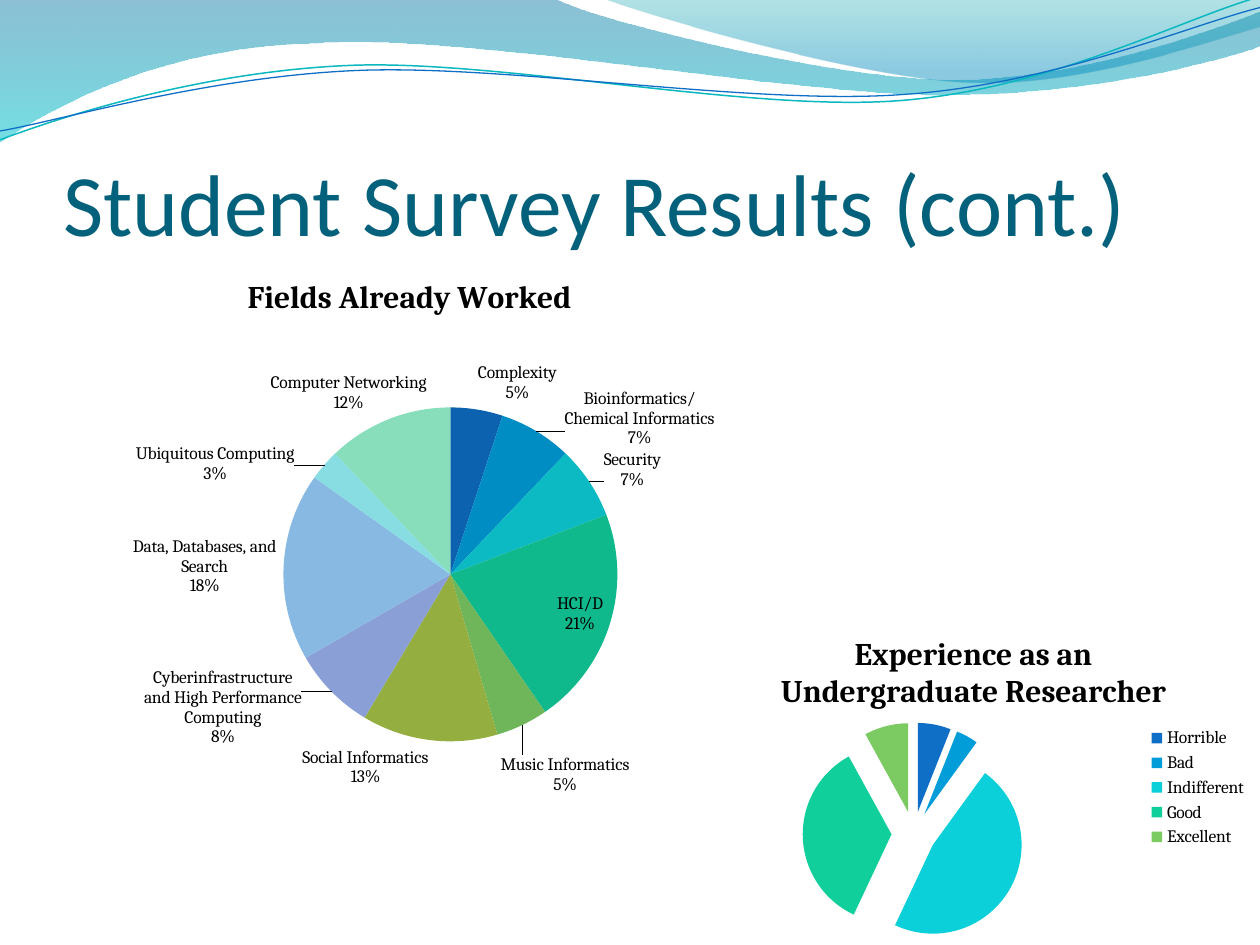
import dataclasses
import pptx
import pptx.chart.data
import pptx.dml.color
import pptx.enum.chart
import pptx.enum.text
import pptx.oxml
import pptx.oxml.ns
import pptx.slide
import pptx.util

COLUMNS = 10
ROWS = 7.5
LABEL_SIZE = (
    '<c:extLst {}><c:ext uri="{{CE6537A1-D6FC-4f65-9D91-7224C49458BB}}" '
    'xmlns:c15="http://schemas.microsoft.com/office/drawing/2012/chart">'
    '<c15:layout><c:manualLayout><c:w val="{}"/><c:h val="{}"/></c:manualLayout>'
    '</c15:layout></c:ext></c:extLst>')


def colour(value):
    return pptx.dml.color.RGBColor.from_string(value)


def element(tag, **attributes):
    item = pptx.oxml.parse_xml(f"<{tag} {pptx.oxml.ns.nsdecls(tag.split(':')[0])}/>")
    for name, value in attributes.items():
        item.set(name, str(value))
    return item


@dataclasses.dataclass
class SurveySlide:
    deck: pptx.presentation.Presentation
    page: pptx.slide.Slide
    title_font: str = "Calibri"
    chart_font: str = "Cambria"
    title_colour: str = "04617B"
    text_colour: str = "000000"

    def grid(self, column, row):
        return (int(self.deck.slide_width * column / COLUMNS),
                int(self.deck.slide_height * row / ROWS))

    def box(self, left, top, width, height):
        return self.grid(left, top) + self.grid(width, height)

    def outline(self, start, segments, close):
        builder = self.page.shapes.build_freeform(*self.grid(*start))
        points = [self.grid(*segment[i:i + 2])
                  for segment in segments for i in range(0, len(segment), 2)]
        builder.add_line_segments(points, close=close)
        shape = builder.convert_to_shape()
        shape.shadow.inherit = False
        lines = iter(shape._element.xpath(".//a:path/a:lnTo"))
        for segment in segments:
            steps = [next(lines) for _ in range(len(segment) // 2)]
            if len(steps) == 3:
                curve = element("a:cubicBezTo")
                steps[0].addprevious(curve)
                for step in steps:
                    curve.append(step[0])
                    step.getparent().remove(step)
        return shape

    def wave(self, start, segments, stops):
        shape = self.outline(start, segments, True)
        shape.line.fill.background()
        shape.fill.gradient()
        shape.fill.gradient_angle = 270
        for stop, (position, value, _) in zip(shape.fill.gradient_stops, stops):
            stop.position = position
            stop.color.rgb = colour(value)
        for node, (_, _, opacity) in zip(shape._element.xpath(".//a:gs/a:srgbClr"), stops):
            node.append(element("a:alpha", val=opacity * 1000))

    def strand(self, start, segments, value, width):
        shape = self.outline(start, segments, False)
        shape.fill.background()
        shape.line.color.rgb = colour(value)
        shape.line.width = pptx.util.Pt(width)

    def title(self, text, place):
        box = self.page.shapes.title
        box.left, box.top, box.width, box.height = self.box(*place)
        frame = box.text_frame
        frame.text = text
        frame.word_wrap = True
        frame.vertical_anchor = pptx.enum.text.MSO_ANCHOR.BOTTOM
        frame.margin_left = frame.margin_right = frame.margin_bottom = 0
        para = frame.paragraphs[0]
        para.alignment = pptx.enum.text.PP_ALIGN.LEFT
        self.style(para.runs[0].font, self.title_font, 50, self.title_colour)

    def style(self, font, name, size, value, bold=False):
        font.name = name
        font.size = pptx.util.Pt(size)
        font.bold = bold
        font.color.rgb = colour(value)

    def pie(self, heading, values, colours, place, plot_area):
        data = pptx.chart.data.CategoryChartData()
        data.categories = list(values)
        data.add_series("Series 1", list(values.values()))
        chart = self.page.shapes.add_chart(
            pptx.enum.chart.XL_CHART_TYPE.PIE, *self.box(*place), data).chart
        self.style(chart.font, self.chart_font, 10, self.text_colour)
        chart.has_legend = False
        chart.has_title = True
        chart.chart_title.text_frame.text = heading
        run = chart.chart_title.text_frame.paragraphs[0].runs[0]
        self.style(run.font, self.chart_font, 18, self.text_colour, True)
        chart.plots[0].vary_by_categories = True
        for index, value in enumerate(colours):
            fill = chart.plots[0].series[0].points[index].format.fill
            fill.solid()
            fill.fore_color.rgb = colour(value)
        area = chart._chartSpace.xpath(".//c:plotArea")[0]
        for old in area.xpath("c:layout"):
            area.remove(old)
        area.insert(0, self.layout(plot_area, "inner", "edge"))
        return chart

    def layout(self, shares, target=None, mode=None):
        layout = element("c:layout")
        manual = element("c:manualLayout")
        layout.append(manual)
        if target:
            manual.append(element("c:layoutTarget", val=target))
        if mode:
            manual.append(element("c:xMode", val=mode))
            manual.append(element("c:yMode", val=mode))
        for name, share in zip("xywh", shares):
            manual.append(element(f"c:{name}", val=share))
        return layout

    def place_title(self, chart, shares):
        title = chart._chartSpace.xpath(".//c:title")[0]
        for old in title.xpath("c:layout"):
            title.remove(old)
        title.xpath("c:tx")[0].addnext(self.layout(shares, mode="edge"))

    def slice_labels(self, chart, offsets, sizes, inside):
        positions = pptx.enum.chart.XL_LABEL_POSITION
        series = chart.plots[0].series[0]
        series.data_labels.position = positions.BEST_FIT
        for index in offsets:
            series.points[index].data_label.position = (
                positions.INSIDE_END if index == inside else positions.BEST_FIT)
        shown = {"showVal": 0, "showCatName": 1, "showPercent": 1, "showSerName": 0}
        for group in series._element.xpath("c:dLbls | c:dLbls/c:dLbl"):
            for name, value in shown.items():
                for node in group.xpath(f"c:{name}"):
                    node.set("val", str(value))
            separator = element("c:separator")
            separator.text = "\n"
            group.xpath("c:showBubbleSize")[0].addnext(separator)
            for node in group.xpath("c:idx"):
                index = int(node.get("val"))
                node.addnext(self.layout(offsets[index]))
                if index in sizes:
                    group.append(pptx.oxml.parse_xml(
                        LABEL_SIZE.format(pptx.oxml.ns.nsdecls("c"), *sizes[index])))

    def explode(self, chart, percent):
        for node in chart._chartSpace.xpath(".//c:dPt/c:spPr"):
            node.addprevious(element("c:explosion", val=percent))

    def legend(self, chart):
        chart.has_legend = True
        chart.legend.position = pptx.enum.chart.XL_LEGEND_POSITION.RIGHT
        chart.legend.include_in_layout = False
        self.style(chart.legend.font, self.chart_font, 10, self.text_colour)


def main():
    deck = pptx.Presentation()
    deck.slide_width, deck.slide_height = pptx.util.Inches(COLUMNS), pptx.util.Inches(ROWS)
    survey = SurveySlide(deck, deck.slides.add_slide(deck.slide_layouts[5]))
    survey.wave((0, 0), [
        (4.4, -0.01), (4.76, 0.17, 6.64, 0.63, 7.58, 0.63), (8.53, 0.63, 9.58, 0.26, 10, 0.09),
        (10.01, 0.36), (9.83, 0.44, 8.7, 0.76, 7.46, 0.75), (6.22, 0.75, 3.82, 0.28, 2.57, 0.34),
        (1.29, 0.36, 0.46, 0.83, -0.01, 1.13),
    ], [(0, "0074A1", 45), (1, "00C6CF", 55)])
    survey.wave((4.79, -0.01), [
        (5.09, 0.11, 6.82, 0.62, 7.69, 0.65), (8.56, 0.69, 9.61, 0.32, 10, 0.21), (10, 0),
    ], [(0, "00A1A9", 30), (0.8, "008BBF", 45)])
    survey.strand((0, 1.11), [
        (0.48, 0.93, 1.58, 0.57, 2.77, 0.52), (3.95, 0.47, 5.93, 0.89, 7.13, 0.8),
        (8.33, 0.71, 9.38, 0.15, 9.98, -0.02)], "0AB8BF", 0.85)
    survey.strand((0, 1.04), [
        (0.47, 0.96, 1.64, 0.61, 2.83, 0.56), (4.03, 0.51, 5.97, 0.84, 7.17, 0.75),
        (8.36, 0.67, 9.41, 0.21, 10, 0.06)], "0F6FC6", 0.75)
    survey.title("Student Survey Results (cont.)", (0.5, 0.77, 9.08, 1.25))

    fields = survey.pie("Fields Already Worked", {
        "Complexity": 5, "Bioinformatics/Chemical Informatics": 7, "Security": 7, "HCI/D": 21,
        "Music Informatics": 5, "Social Informatics": 13,
        "Cyberinfrastructure and High Performance Computing": 8,
        "Data, Databases, and Search": 18, "Ubiquitous Computing": 3, "Computer Networking": 12,
    }, ["0D62AF", "008DC3", "0BBAC3", "10B98B", "6FB55A",
        "94AF40", "8A9FD6", "87B9E2", "87DDE2", "88DEBB"],
        (0, 2, 6.5, 4.57), (0.34, 0.27, 0.42, 0.58))
    survey.slice_labels(
        fields,
        offsets={1: (0.03, 0.04), 2: (0.01, 0.02), 3: (0, 0.02), 4: (-0.03, 0.04),
                 6: (-0.03, -0.05), 8: (-0.03, 0.04), 9: (0.05, 0)},
        sizes={6: (0.18, 0.18), 8: (0.1, 0.11)}, inside=3)

    experience = survey.pie("Experience as an Undergraduate Researcher", {
        "Horrible": 6, "Bad": 4, "Indifferent": 47, "Good": 35, "Excellent": 8,
    }, ["0F6FC6", "009DD9", "0BD0D9", "10CF9B", "7CCA62"],
        (5.42, 4.84, 4.58, 2.82), (0.24, 0.38, 0.32, 0.5))
    survey.place_title(experience, (0.16, 0.05))
    survey.explode(experience, 25)
    survey.legend(experience)
    deck.save("out.pptx")


if __name__ == "__main__":
    main()
